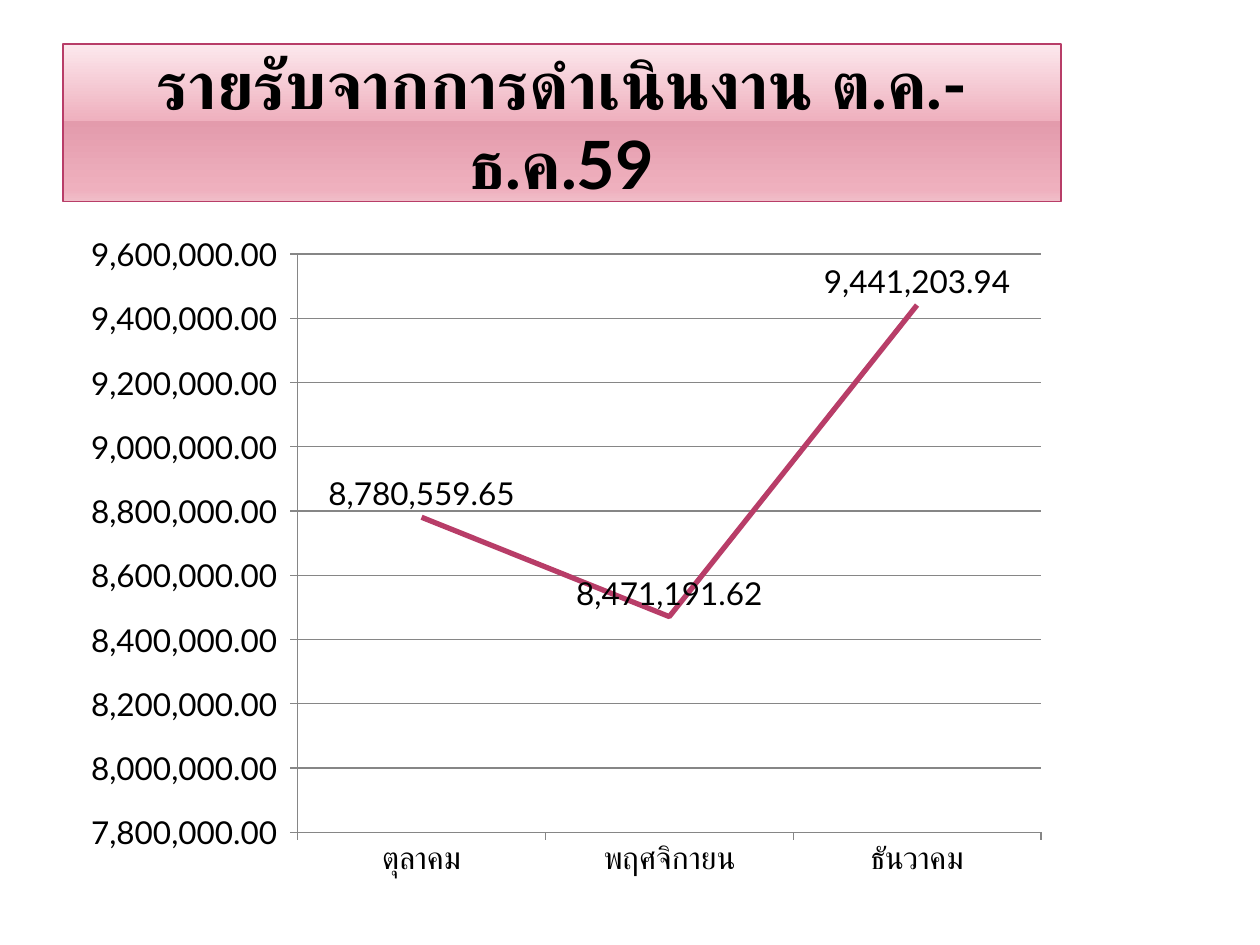
import pptx
import pptx.chart.data
import pptx.dml.color
import pptx.enum.chart
import pptx.enum.shapes
import pptx.enum.text
import pptx.oxml
import pptx.oxml.ns
import pptx.util

WIDTH, HEIGHT = 10, 7.5
LEFT, CONTENT_WIDTH = 0.05, 0.792  # shares of the slide width
FONT = "Lato"
BLACK, ROSE, GRAY = "000000", "B83D68", "868686"
BANNER_STOPS = [(0, "FCE8ED"), (49, "EFB0BE"), (49, "E39BAC"),
                (92, "EFB0BE"), (100, "F0BEC9")]
AMOUNT_FORMAT = '_(* #,##0.00_);_(* \\(#,##0.00\\);_(* "-"??_);_(@_)'
INCOME = {"ตุลาคม": 8780559.65, "พฤศจิกายน": 8471191.62, "ธันวาคม": 9441203.94}


def color(value):
    return pptx.dml.color.RGBColor.from_string(value)


def area(top, height):
    """Box in the content column; top and height are shares of the slide height."""
    return [pptx.util.Inches(round(length, 2)) for length in
            (LEFT * WIDTH, top * HEIGHT, CONTENT_WIDTH * WIDTH, height * HEIGHT)]


def style_font(font, size, bold=False, fill=BLACK):
    font.name = FONT
    font.size = pptx.util.Pt(size)
    font.bold = bold
    font.color.rgb = color(fill)


def style_line(line, fill, width):
    line.color.rgb = color(fill)
    line.width = pptx.util.Pt(width)


def write_text(shape, text, *, size, bold=False, fill=BLACK):
    frame = shape.text_frame
    frame.word_wrap = True
    frame.vertical_anchor = pptx.enum.text.MSO_ANCHOR.MIDDLE
    frame.margin_left = frame.margin_right = pptx.util.Inches(0.05)
    frame.margin_top = frame.margin_bottom = 0
    paragraph = frame.paragraphs[0]
    paragraph.alignment = pptx.enum.text.PP_ALIGN.CENTER
    run = paragraph.add_run()
    run.text = text
    style_font(run.font, size, bold, fill)


def fill_gradient(shape, stops):
    """Fill from top to bottom with (percent, colour) stops."""
    shape.fill.gradient()
    gradient = shape._element.spPr.find(pptx.oxml.ns.qn("a:gradFill"))
    for child in list(gradient):
        gradient.remove(child)
    namespace = pptx.oxml.ns.nsdecls("a")
    stop_xml = "".join(
        f'<a:gs pos="{percent * 1000}"><a:srgbClr val="{value}"/></a:gs>'
        for percent, value in stops)
    gradient.append(pptx.oxml.parse_xml(f"<a:gsLst {namespace}>{stop_xml}</a:gsLst>"))
    gradient.append(pptx.oxml.parse_xml(f'<a:lin {namespace} ang="5400000" scaled="0"/>'))


def add_banner(slide, text):
    banner = slide.shapes.add_shape(
        pptx.enum.shapes.MSO_SHAPE.RECTANGLE, *area(0.047, 0.167))
    banner.shadow.inherit = False
    fill_gradient(banner, BANNER_STOPS)
    style_line(banner.line, ROSE, 0.9)
    write_text(banner, text, size=38, bold=True)


def add_income_chart(slide, income):
    data = pptx.chart.data.CategoryChartData(number_format=AMOUNT_FORMAT)
    data.categories = list(income)
    data.add_series("Series 1", list(income.values()))
    chart = slide.shapes.add_chart(
        pptx.enum.chart.XL_CHART_TYPE.LINE_STACKED, *area(0.235, 0.707), data).chart
    chart.has_title = chart.has_legend = False
    style_font(chart.font, 18)

    # Axes
    for axis in (chart.category_axis, chart.value_axis):
        axis.major_tick_mark = pptx.enum.chart.XL_TICK_MARK.OUTSIDE
        axis.minor_tick_mark = pptx.enum.chart.XL_TICK_MARK.NONE
        style_line(axis.format.line, GRAY, 0.75)
    values = chart.value_axis
    values.minimum_scale, values.maximum_scale = 7800000, 9600000
    values.major_unit = 200000
    values.has_major_gridlines = True
    style_line(values.major_gridlines.format.line, GRAY, 0.75)
    values.tick_labels.number_format = AMOUNT_FORMAT
    values.tick_labels.number_format_is_linked = False

    # Line and its labels
    plot = chart.plots[0]
    plot.vary_by_categories = False
    series = plot.series[0]
    series.smooth = False
    series.marker.style = pptx.enum.chart.XL_MARKER_STYLE.NONE
    style_line(series.format.line, ROSE, 3)
    labels = series.data_labels
    labels.show_value = True
    labels.position = pptx.enum.chart.XL_LABEL_POSITION.ABOVE
    labels.number_format = AMOUNT_FORMAT
    labels.number_format_is_linked = False
    style_font(labels.font, 18)


def main():
    presentation = pptx.Presentation()
    presentation.slide_width = pptx.util.Inches(WIDTH)
    presentation.slide_height = pptx.util.Inches(HEIGHT)
    slide = presentation.slides.add_slide(presentation.slide_layouts[6])
    add_banner(slide, "รายรับจากการดำเนินงาน ต.ค.- ธ.ค.59")
    add_income_chart(slide, INCOME)
    presentation.save("out.pptx")


if __name__ == "__main__":
    main()
